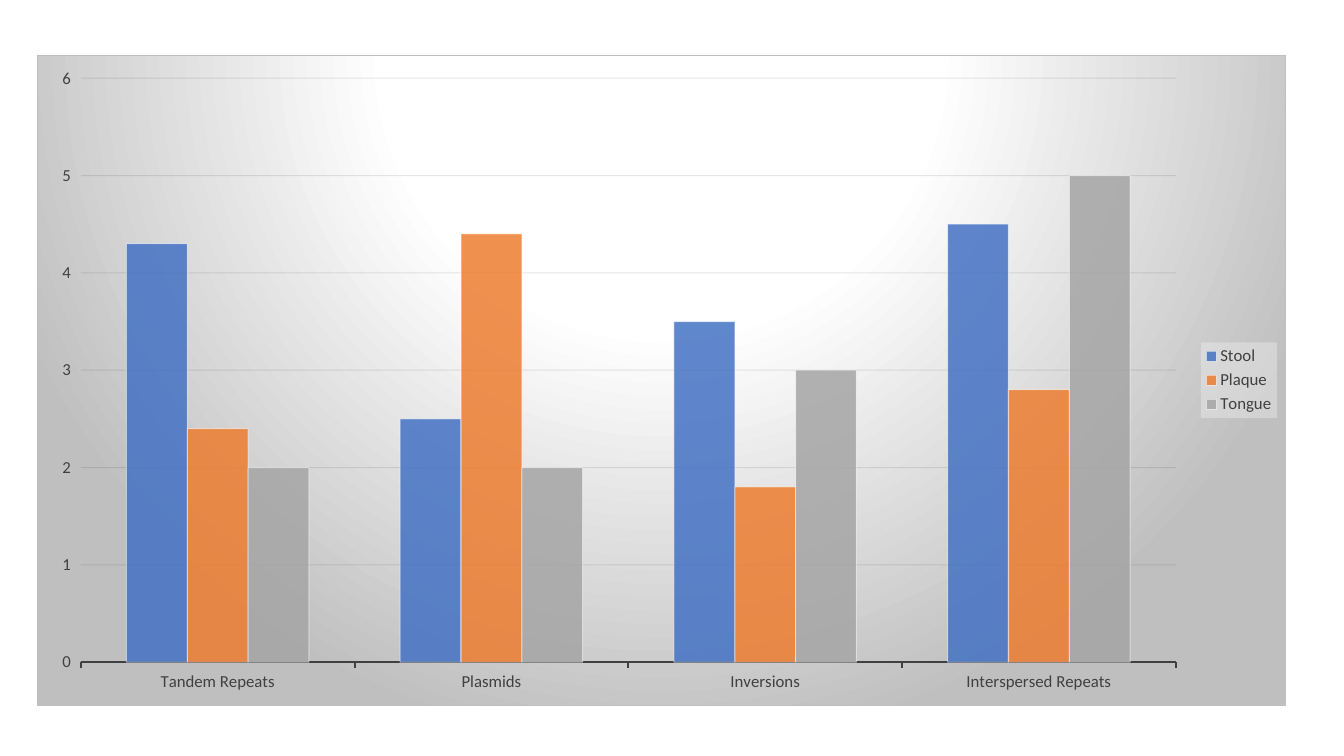
import pptx
import pptx.chart.data
import pptx.dml.color
import pptx.enum.chart
import pptx.oxml
import pptx.oxml.ns
import pptx.util
from pptx.util import Cm

NAMESPACES = pptx.oxml.ns.nsdecls("a", "c")
SAMPLES = {
    "Stool": ((4.3, 2.5, 3.5, 4.5), "4472C4"),
    "Plaque": ((2.4, 4.4, 1.8, 2.8), "ED7D31"),
    "Tongue": ((2, 2, 3, 5), "A5A5A5"),
}
REGIONS = ("Tandem Repeats", "Plasmids", "Inversions", "Interspersed Repeats")


def color(hex_code):
    return pptx.dml.color.RGBColor.from_string(hex_code)


def format_text(owner, *, size=12, hex_code="404040", face="Calibri"):
    owner.font.size = pptx.util.Pt(size)
    owner.font.name = face
    owner.font.color.rgb = color(hex_code)


def format_line(line, hex_code, width=0.75):
    line.color.rgb = color(hex_code)
    line.width = pptx.util.Pt(width)


def set_opacity(chart, query, percent):
    """Give every colour found by the query the same opacity."""
    for tint in chart.element.xpath(query):
        tint.append(pptx.oxml.parse_xml(
            f'<a:alpha {NAMESPACES} val="{percent * 1000}"/>'))


class ChartSlide:
    def __init__(self, presentation):
        self.slide = presentation.slides.add_slide(presentation.slide_layouts[6])

    def columns(self, categories, samples, left, top, width, height):
        content = pptx.chart.data.CategoryChartData()
        content.categories = categories
        for name, (values, _) in samples.items():
            content.add_series(name, values)
        chart = self.slide.shapes.add_chart(
            pptx.enum.chart.XL_CHART_TYPE.COLUMN_CLUSTERED,
            left, top, width, height, content).chart
        format_text(chart, size=10, hex_code="000000")
        chart.has_title = False
        plot = chart.plots[0]
        plot.gap_width, plot.overlap, plot.vary_by_categories = 150, 0, False
        for series, (_, hex_code) in zip(plot.series, samples.values()):
            series.format.fill.solid()
            series.format.fill.fore_color.rgb = color(hex_code)
            format_line(series.format.line, "FFFFFF")
        set_opacity(chart, ".//c:ser/c:spPr/a:solidFill/a:srgbClr", 85)
        set_opacity(chart, ".//c:ser/c:spPr/a:ln//a:srgbClr", 50)
        return chart

    def axes(self, chart, maximum, step):
        for axis in (chart.category_axis, chart.value_axis):
            format_text(axis.tick_labels)
            axis.major_tick_mark = pptx.enum.chart.XL_TICK_MARK.OUTSIDE
            axis.minor_tick_mark = pptx.enum.chart.XL_TICK_MARK.NONE
        format_line(chart.category_axis.format.line, "404040", 1.5)
        scale = chart.value_axis
        scale.minimum_scale, scale.maximum_scale, scale.major_unit = 0, maximum, step
        scale.format.line.fill.background()
        format_line(scale.major_gridlines.format.line, "0D0D0D")
        set_opacity(chart, ".//c:majorGridlines//a:srgbClr", 10)

    def legend(self, chart):
        chart.has_legend = True
        chart.legend.position = pptx.enum.chart.XL_LEGEND_POSITION.RIGHT
        chart.legend.include_in_layout = False
        format_text(chart.legend)
        chart.element.xpath(".//c:legend/c:overlay")[0].addnext(pptx.oxml.parse_xml(
            f'<c:spPr {NAMESPACES}><a:solidFill><a:srgbClr val="F2F2F2"/>'
            '</a:solidFill><a:ln><a:noFill/></a:ln></c:spPr>'))
        set_opacity(chart, ".//c:legend/c:spPr//a:srgbClr", 39)

    def backdrop(self, chart, stops, border):
        """Fill the chart area with a circular gradient and outline it."""
        shades = "".join(
            f'<a:gs pos="{percent * 1000}"><a:srgbClr val="{hex_code}"/></a:gs>'
            for percent, hex_code in stops)
        chart.element.xpath("./c:chart")[0].addnext(pptx.oxml.parse_xml(
            f'<c:spPr {NAMESPACES}><a:gradFill><a:gsLst>{shades}</a:gsLst>'
            '<a:path path="circle"><a:fillToRect l="50000" t="-80000" '
            'r="50000" b="180000"/></a:path></a:gradFill><a:ln w="9525">'
            f'<a:solidFill><a:srgbClr val="{border}"/></a:solidFill></a:ln></c:spPr>'))


def main():
    presentation = pptx.Presentation()
    presentation.slide_width, presentation.slide_height = Cm(33.87), Cm(19.05)
    page = ChartSlide(presentation)
    repeats = page.columns(REGIONS, SAMPLES, Cm(0.93), Cm(1.38), Cm(31.47), Cm(16.4))
    page.axes(repeats, maximum=6, step=1)
    page.legend(repeats)
    page.backdrop(repeats, ((0, "FFFFFF"), (39, "FFFFFF"), (100, "BFBFBF")), "BFBFBF")
    presentation.save("out.pptx")


if __name__ == "__main__":
    main()
